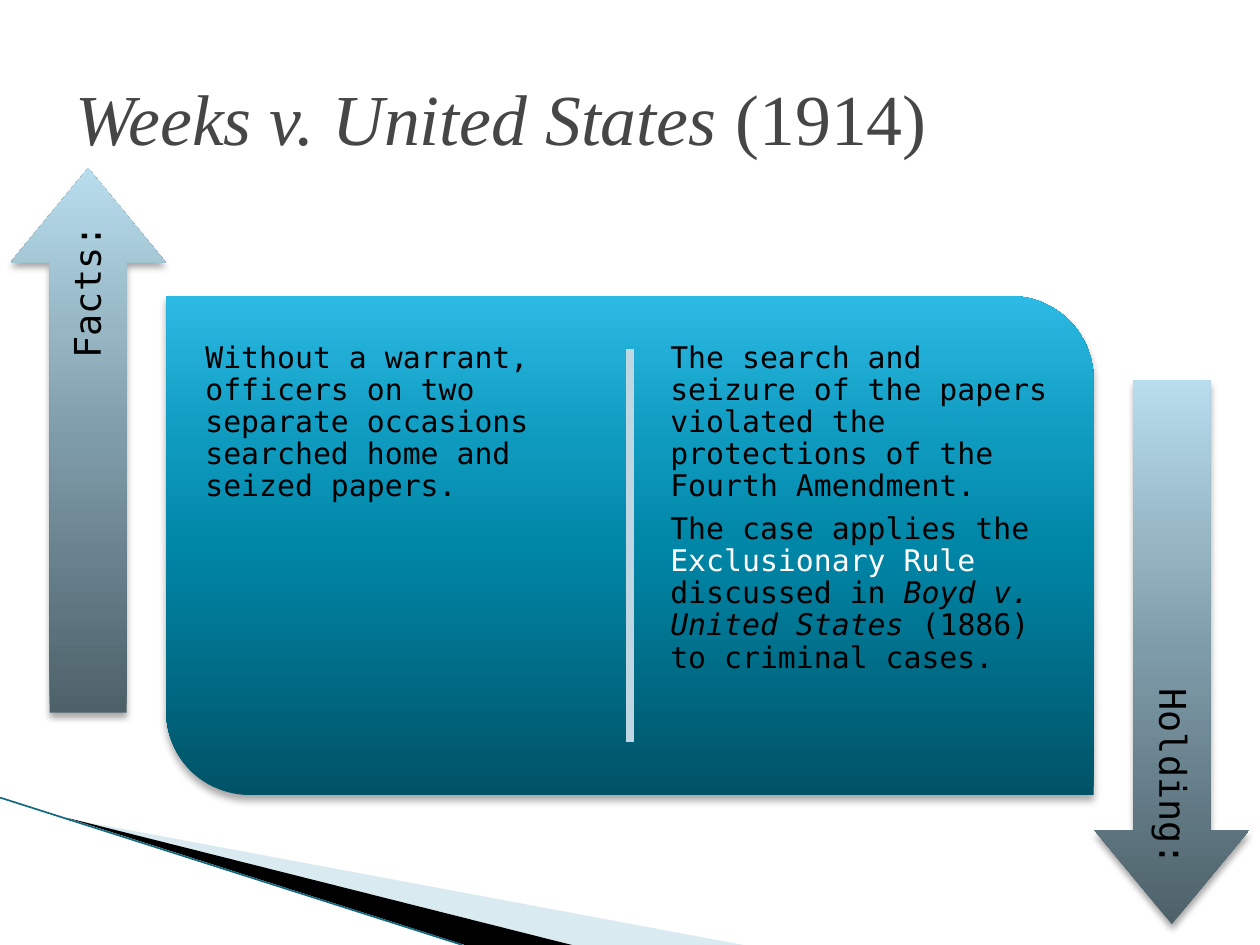
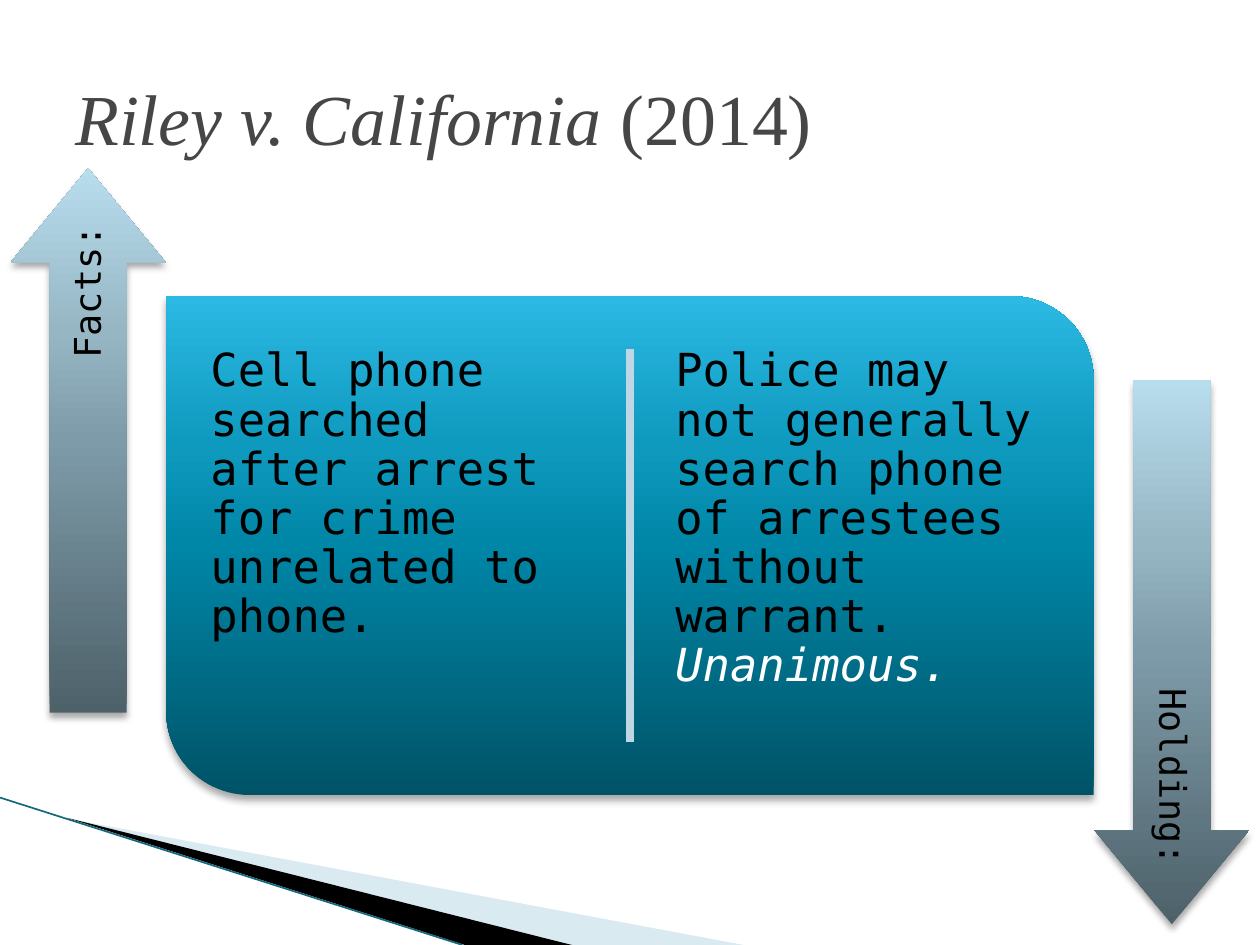
from dataclasses import dataclass
from typing import NamedTuple

from lxml.etree import SubElement
from pptx import Presentation
from pptx.dml.color import RGBColor
from pptx.enum.shapes import MSO_CONNECTOR, MSO_SHAPE
from pptx.enum.text import MSO_ANCHOR, PP_ALIGN
from pptx.oxml import parse_xml
from pptx.oxml.ns import nsdecls, qn
from pptx.util import Inches, Pt


@dataclass(frozen=True)
class Theme:
    title_font: str = "Times New Roman"
    body_font: str = "DejaVu Sans Mono"
    title_size: int = 41
    label_size: int = 21
    title: str = "464646"
    text: str = "000000"
    highlight: str = "FFFFFF"
    wedge_pale: str = "A0CBDC"
    wedge_dark: str = "000000"
    edge: str = "12697F"
    divider: str = "BED7E2"
    panel: tuple = ((0, "005367"), (50, "0086A7"), (70, "0E9ABE"), (100, "2CB9E3"))
    arrow: tuple = ((0, "4D6169"), (50, "7E9BA9"), (70, "96B6C4"), (100, "B8DDED"))


THEME = Theme()


class Run(NamedTuple):
    text: str
    italic: bool = False
    color: str = THEME.text


class Box(NamedTuple):
    left: float
    top: float
    width: float
    height: float

    def lengths(self) -> list:
        return [Inches(v) for v in self]


class Arrow(NamedTuple):
    label: str
    box: Box
    label_box: Box
    rotation: int


class Wedge(NamedTuple):
    points: tuple
    color: str
    alpha: int


class Case(NamedTuple):
    name: str
    year: str
    size: int
    inset: float
    facts: list
    holding: list


TITLE_BOX = Box(0.5, 0.3, 9, 1.25)
PANEL_BOX = Box(1.32, 2.35, 7.36, 3.96)
FACTS_BOX = Box(1.56, 2.65, 3.19, 3.36)
HOLDING_BOX = FACTS_BOX._replace(left=5.25)

ARROWS = [
    Arrow("Facts:", Box(-1.46, 2.88, 4.32, 1.23), Box(-1.27, 3.37, 3.95, 0.61), 270),
    Arrow("Holding:", Box(7.14, 4.56, 4.32, 1.23), Box(7.32, 4.68, 3.95, 0.61), 90),
]

WEDGES = [
    Wedge(((0.55, 6.5), (5.9, 7.5), (4.54, 7.5)), THEME.wedge_pale, 40),
    Wedge(((0.53, 6.49), (4.54, 7.5), (3.69, 7.5)), THEME.wedge_dark, 100),
]

CASES = [
    Case(
        "Weeks v. United States", " (1914)", 17, 0.07,
        [[Run("Without a warrant, officers on two separate occasions "
              "searched home and seized papers.")]],
        [
            [Run("The search and seizure of the papers violated the "
                 "protections of the Fourth Amendment.")],
            [
                Run("The case applies the "),
                Run("Exclusionary Rule", color=THEME.highlight),
                Run(" discussed in "),
                Run("Boyd v. United States", italic=True),
                Run(" (1886) to criminal cases."),
            ],
        ],
    ),
    Case(
        "Riley v. California", " (2014)", 26, 0.11,
        [[Run("Cell phone searched after arrest for crime unrelated to phone.")]],
        [[
            Run("Police may not generally search phone of arrestees without warrant. "),
            Run("Unanimous.", italic=True, color=THEME.highlight),
        ]],
    ),
]


def add_text(s, box: Box, paragraphs: list, *, size: int, font: str = THEME.body_font,
             inset: float | None = None, anchor=MSO_ANCHOR.TOP, align=PP_ALIGN.LEFT,
             line_spacing: float = 0.9, after: float = 0.35, rotation: int = 0) -> None:
    sp = s.shapes.add_textbox(*box.lengths())
    sp.rotation = rotation
    tf = sp.text_frame
    tf.word_wrap = True
    tf.vertical_anchor = anchor
    if inset is not None:
        tf.margin_left = tf.margin_right = Inches(inset)
        tf.margin_top = tf.margin_bottom = Inches(inset)
    for i, runs in enumerate(paragraphs):
        p = tf.add_paragraph() if i else tf.paragraphs[0]
        p.alignment = align
        p.line_spacing = line_spacing
        p.space_after = Pt(size * after)
        for run in runs:
            r = p.add_run()
            r.text = run.text
            r.font.name = font
            r.font.size = Pt(size)
            r.font.italic = run.italic
            r.font.color.rgb = RGBColor.from_string(run.color)


def add_line(s, start: tuple, end: tuple, color: str, width: float) -> None:
    ends = [Inches(v) for v in (*start, *end)]
    cn = s.shapes.add_connector(MSO_CONNECTOR.STRAIGHT, *ends)
    cn.line.color.rgb = RGBColor.from_string(color)
    cn.line.width = Pt(width)
    SubElement(cn._element.spPr, qn("a:effectLst"))


def add_wedge(s, wedge: Wedge) -> None:
    points = [(Inches(x), Inches(y)) for x, y in wedge.points]
    fb = s.shapes.build_freeform(*points[0])
    fb.add_line_segments(points[1:], close=True)
    sp = fb.convert_to_shape()
    sp.shadow.inherit = False
    sp.line.fill.background()
    sp.fill.solid()
    sp.fill.fore_color.rgb = RGBColor.from_string(wedge.color)
    if wedge.alpha < 100:
        clr = sp._element.spPr.find(".//" + qn("a:srgbClr"))
        SubElement(clr, qn("a:alpha"), val=str(wedge.alpha * 1000))


def add_gradient_shape(s, kind, box: Box, adjustments: tuple, stops: tuple,
                       rotation: int = 0) -> None:
    sp = s.shapes.add_shape(kind, *box.lengths())
    sp.rotation = rotation
    for i, value in enumerate(adjustments):
        sp.adjustments[i] = value
    sp.line.fill.background()
    stop_xml = "".join(
        f'<a:gs pos="{pos * 1000}"><a:srgbClr val="{color}"/></a:gs>'
        for pos, color in stops
    )
    spPr = sp._element.spPr
    spPr.find(qn("a:ln")).addprevious(parse_xml(
        f'<a:gradFill {nsdecls("a")} rotWithShape="0"><a:gsLst>{stop_xml}</a:gsLst>'
        '<a:lin ang="16200000" scaled="0"/></a:gradFill>'
    ))
    spPr.append(parse_xml(
        f'<a:effectLst {nsdecls("a")}><a:outerShdw blurRad="{Pt(4)}" dist="{Pt(3)}" '
        'dir="5400000" rotWithShape="0"><a:srgbClr val="000000">'
        '<a:alpha val="35000"/></a:srgbClr></a:outerShdw></a:effectLst>'
    ))


def add_corner(s) -> None:
    for wedge in WEDGES:
        add_wedge(s, wedge)
    add_line(s, (0, 6.33), (3.67, 7.5), THEME.edge, 0.95)


def add_arrow(s, arrow: Arrow) -> None:
    add_gradient_shape(s, MSO_SHAPE.RIGHT_ARROW, arrow.box, (0.498, 0.607),
                       THEME.arrow, arrow.rotation)
    add_text(s, arrow.label_box, [[Run(arrow.label)]], size=THEME.label_size,
             inset=0.09, anchor=MSO_ANCHOR.MIDDLE, align=PP_ALIGN.RIGHT,
             rotation=arrow.rotation)


def add_case(prs, case: Case) -> None:
    s = prs.slides.add_slide(prs.slide_layouts[6])
    add_corner(s)
    title = [Run(case.name, True, THEME.title), Run(case.year, False, THEME.title)]
    add_text(s, TITLE_BOX, [title], size=THEME.title_size, font=THEME.title_font,
             anchor=MSO_ANCHOR.MIDDLE, line_spacing=1.0, after=0)
    add_gradient_shape(s, MSO_SHAPE.ROUND_2_DIAG_RECTANGLE, PANEL_BOX, (0, 0.167),
                       THEME.panel)
    add_line(s, (5, 2.77), (5, 5.89), THEME.divider, 4.33)
    for box, paragraphs in ((FACTS_BOX, case.facts), (HOLDING_BOX, case.holding)):
        add_text(s, box, paragraphs, size=case.size, inset=case.inset)
    for arrow in ARROWS:
        add_arrow(s, arrow)


def main() -> None:
    prs = Presentation()
    prs.slide_width, prs.slide_height = Inches(10), Inches(7.5)
    for case in CASES:
        add_case(prs, case)
    prs.save("out.pptx")


if __name__ == "__main__":
    main()
